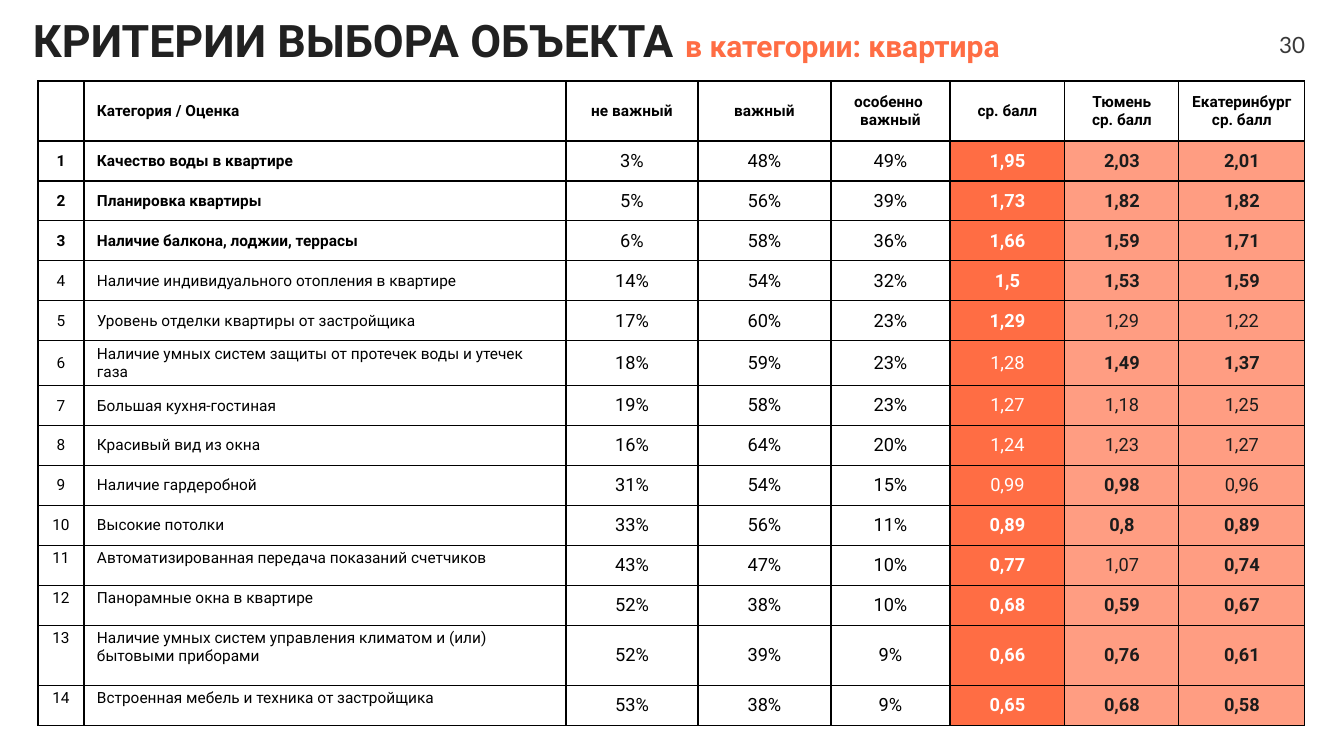
import pptx
import pptx.dml.color
import pptx.enum.text
import pptx.oxml
import pptx.oxml.ns
import pptx.util

TITLE = [("КРИТЕРИИ ВЫБОРА ОБЪЕКТА ", 32, "212121"),
         ("в категории: квартира", 21.4, "FF6D44")]
PAGE_NUMBER = "30"
HEADER = ["", "Категория / Оценка", "не важный", "важный", "особенно \nважный",
          "ср. балл", "Тюмень\nср. балл", "Екатеринбург\nср. балл"]
# criterion, three shares, three scores, columns of the scores set in bold
CRITERIA = [
    ("Качество воды в квартире", "3%", "48%", "49%", "1,95", "2,03", "2,01", (5, 6, 7)),
    ("Планировка квартиры", "5%", "56%", "39%", "1,73", "1,82", "1,82", (5, 6, 7)),
    ("Наличие балкона, лоджии, террасы", "6%", "58%", "36%", "1,66", "1,59", "1,71", (5, 6, 7)),
    ("Наличие индивидуального отопления в квартире",
     "14%", "54%", "32%", "1,5", "1,53", "1,59", (5, 6, 7)),
    ("Уровень отделки квартиры от застройщика",
     "17%", "60%", "23%", "1,29", "1,29", "1,22", (5,)),
    ("Наличие умных систем защиты от протечек воды и утечек газа",
     "18%", "59%", "23%", "1,28", "1,49", "1,37", (6, 7)),
    ("Большая кухня-гостиная", "19%", "58%", "23%", "1,27", "1,18", "1,25", ()),
    ("Красивый вид из окна", "16%", "64%", "20%", "1,24", "1,23", "1,27", ()),
    ("Наличие гардеробной", "31%", "54%", "15%", "0,99", "0,98", "0,96", (6,)),
    ("Высокие потолки", "33%", "56%", "11%", "0,89", "0,8", "0,89", (5, 6, 7)),
    ("Автоматизированная передача показаний счетчиков",
     "43%", "47%", "10%", "0,77", "1,07", "0,74", (5, 7)),
    ("Панорамные окна в квартире", "52%", "38%", "10%", "0,68", "0,59", "0,67", (5, 6, 7)),
    ("Наличие умных систем управления климатом и (или) бытовыми приборами",
     "52%", "39%", "9%", "0,66", "0,76", "0,61", (5, 6, 7)),
    ("Встроенная мебель и техника от застройщика",
     "53%", "38%", "9%", "0,65", "0,68", "0,58", (5, 6, 7)),
]
COLUMN_WIDTHS = [46, 482, 132, 133, 119, 115, 114, 126]
ROW_HEIGHT, TALL_ROW_HEIGHT, TALL_ROWS = 40, 60, (0, 13)
SCORE_FILLS = {5: "FF6D44", 6: "FF9D82", 7: "FF9D82"}
SCORE_COLORS = {5: "FFFFFF", 6: "1C1C1C", 7: "1C1C1C"}
TOP_CRITERIA = 3        # rows whose number and name are bold
FIRST_TOP_ANCHORED = 11  # from this row number and name sit at the top

ALIGN = pptx.enum.text.PP_ALIGN
ANCHOR = pptx.enum.text.MSO_ANCHOR


def px(length):
    return round(length * 914400 / 100.8)


def rgb(color):
    return pptx.dml.color.RGBColor.from_string(color)


def style(span, size, color, bold=False, name="Roboto"):
    span.font.name = name
    span.font.size = pptx.util.Pt(size)
    span.font.bold = bold
    span.font.color.rgb = rgb(color)


def set_margins(target, side, vertical):
    target.margin_left = target.margin_right = px(side)
    target.margin_top = target.margin_bottom = px(vertical)


def add_box(page, left, top, width, height, margin):
    box = page.shapes.add_textbox(px(left), px(top), px(width), px(height))
    box.text_frame.word_wrap = True
    set_margins(box.text_frame, margin, margin)
    return box.text_frame


def add_borders(cell):
    properties = cell._tc.get_or_add_tcPr()
    for side in "LRTB":
        properties.append(pptx.oxml.parse_xml(
            f'<a:ln{side} {pptx.oxml.ns.nsdecls("a")} w="12700"><a:solidFill>'
            f'<a:srgbClr val="000000"/></a:solidFill></a:ln{side}>'))


def fill_cell(cell, text, row, column, bold_scores):
    label = row == 0 or column < 2
    score = row > 0 and column in SCORE_FILLS
    bold = row <= TOP_CRITERIA if label else column in bold_scores
    add_borders(cell)
    if score:
        cell.fill.solid()
        cell.fill.fore_color.rgb = rgb(SCORE_FILLS[column])
    else:
        cell.fill.background()
    set_margins(cell, 13, 4)
    at_top = column < 2 and row >= FIRST_TOP_ANCHORED
    cell.vertical_anchor = ANCHOR.TOP if at_top else ANCHOR.MIDDLE
    cell.text_frame.text = text
    for para in cell.text_frame.paragraphs:
        para.alignment = ALIGN.LEFT if column == 1 else ALIGN.CENTER
        for span in para.runs:
            style(span, 11 if label else 13,
                  SCORE_COLORS[column] if score else "000000", bold)


def add_criteria_table(page):
    rows = [(HEADER, ())]
    for number, (*values, bold_scores) in enumerate(CRITERIA, 1):
        rows.append(([str(number), *values], bold_scores))
    heights = [TALL_ROW_HEIGHT if row in TALL_ROWS else ROW_HEIGHT
               for row in range(len(rows))]
    table = page.shapes.add_table(
        len(rows), len(HEADER), px(38), px(81),
        px(sum(COLUMN_WIDTHS)), px(sum(heights))).table
    table.first_row = table.horz_banding = False
    for column, width in zip(table.columns, COLUMN_WIDTHS):
        column.width = px(width)
    for row, (texts, bold_scores) in enumerate(rows):
        table.rows[row].height = px(heights[row])
        for column, text in enumerate(texts):
            fill_cell(table.cell(row, column), text, row, column, bold_scores)


def main():
    deck = pptx.Presentation()
    deck.slide_width, deck.slide_height = px(1344), px(756)
    page = deck.slides.add_slide(deck.slide_layouts[6])

    title = add_box(page, 20, 0, 1233, 98, 13).paragraphs[0]
    for text, size, color in TITLE:
        span = title.add_run()
        span.text = text
        style(span, size, color, True)

    add_criteria_table(page)

    number_frame = add_box(page, 1249, 26, 56, 41, 0)
    number_frame.vertical_anchor = ANCHOR.MIDDLE
    number_frame.text = PAGE_NUMBER
    para = number_frame.paragraphs[0]
    para.alignment = ALIGN.RIGHT
    para.line_spacing = 0.9
    style(para.runs[0], 16, "393939", name="Lato")

    deck.save("out.pptx")


if __name__ == "__main__":
    main()
